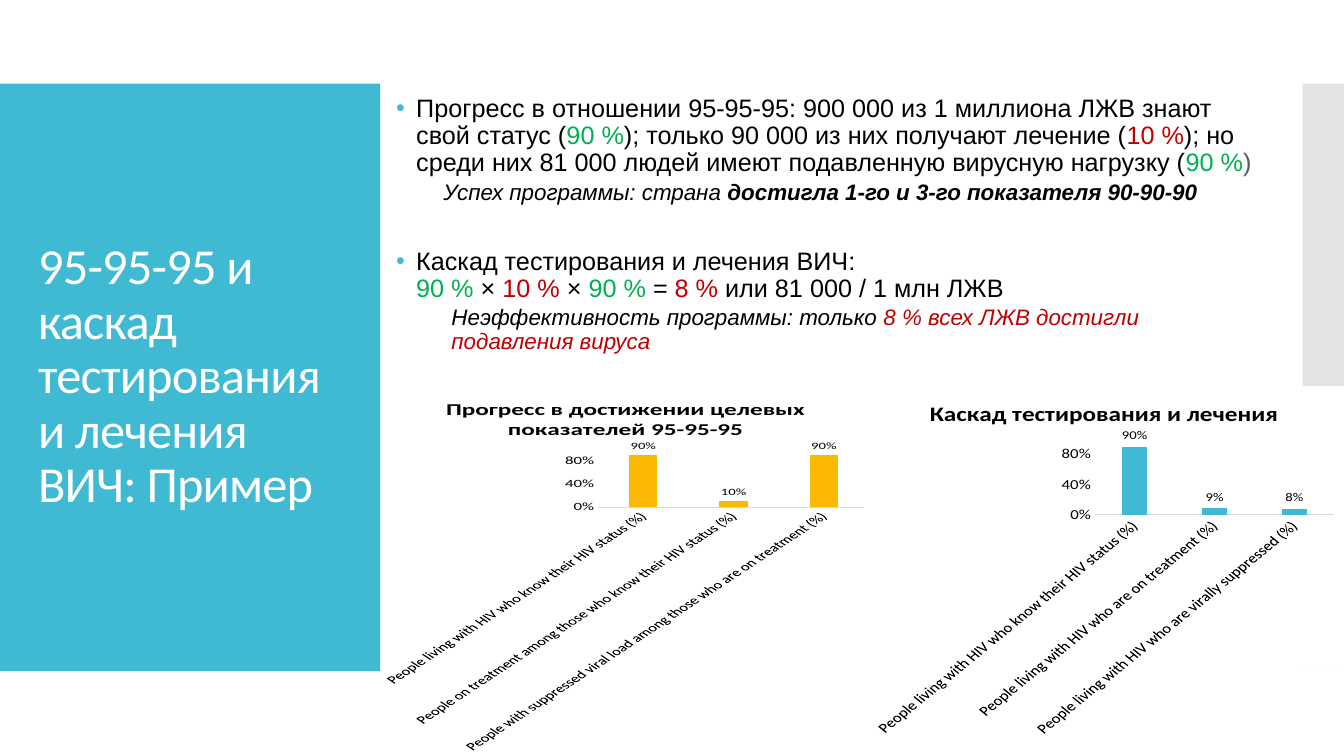
from pptx import Presentation
from pptx.chart.data import CategoryChartData
from pptx.dml.color import RGBColor
from pptx.enum.chart import XL_CHART_TYPE, XL_LABEL_POSITION, XL_TICK_MARK
from pptx.enum.shapes import MSO_SHAPE
from pptx.enum.text import MSO_ANCHOR
from pptx.oxml import parse_xml
from pptx.oxml.ns import nsdecls, qn
from pptx.util import Inches, Pt
from lxml.etree import SubElement

HEX = {"teal": "40BAD2", "gray": "C8C8C8", "white": "FFFFFF", "black": "000000",
       "green": "00B050", "red": "C00000", "dark": "595959", "gold": "FAB900",
       "rule": "D9D9D9"}

MAIN = {"name": "Arial", "size": Pt(18)}
NOTE = {"name": "Arial", "size": Pt(16), "italic": True}
BOLD = {**NOTE, "bold": True}
HEAD = {"name": "Calibri", "size": Pt(36)}
AXIS = {"name": "Calibri", "size": Pt(12)}
LABEL = {"name": "Calibri", "size": Pt(10.5)}
TITLE = {"name": "Calibri", "size": Pt(18), "bold": True}

KNOW = "People living with HIV who know their HIV status (%)"


def paint(fill, key):
    fill.solid()
    fill.fore_color.rgb = RGBColor.from_string(HEX[key])


def style(font, form, key="black"):
    for name, value in form.items():
        setattr(font, name, value)
    font.color.rgb = RGBColor.from_string(HEX[key])


def add_panel(slide, box, key, alpha=None):
    panel = slide.shapes.add_shape(MSO_SHAPE.RECTANGLE, *map(Inches, box))
    panel.shadow.inherit = False
    panel.line.fill.background()
    paint(panel.fill, key)
    if alpha:
        tint = panel.element.spPr.find(".//" + qn("a:srgbClr"))
        SubElement(tint, qn("a:alpha"), val=str(alpha * 1000))


def add_box(slide, box):
    frame = slide.shapes.add_textbox(*map(Inches, box)).text_frame
    frame.word_wrap = True
    frame.vertical_anchor = MSO_ANCHOR.MIDDLE
    return frame


def add_runs(para, runs):
    para.line_spacing = 0.9
    for text, form, key in runs:
        if text == "\n":
            para.add_line_break()
            continue
        run = para.add_run()
        run.text = text
        style(run.font, form, key)


def indent(para, left, bullet=False):
    props = para._p.get_or_add_pPr()
    props.set("marL", str(Inches(left)))
    props.set("indent", str(Inches(-left if bullet else 0)))
    if bullet:
        tint = SubElement(props, qn("a:buClr"))
        SubElement(tint, qn("a:srgbClr"), val=HEX["teal"])
        SubElement(props, qn("a:buFont"), typeface="Arial")
        SubElement(props, qn("a:buChar"), char="•")


def add_body(slide, items):
    frame = add_box(slide, (3.83, 0.2, 8.83, 4.52))
    frame.margin_bottom = Inches(0.5)
    for num, (left, bullet, before, after, runs) in enumerate(items):
        para = frame.add_paragraph() if num else frame.paragraphs[0]
        indent(para, left, bullet)
        para.space_before, para.space_after = Pt(before), Pt(after)
        add_runs(para, runs)


def add_bars(slide, box, title, names, values, key, back=None):
    data = CategoryChartData(number_format="0%")
    data.categories = names
    data.add_series("Series 1", values)
    chart = slide.shapes.add_chart(
        XL_CHART_TYPE.COLUMN_CLUSTERED, *map(Inches, box), data).chart
    chart.has_legend = False
    style(chart.font, {"name": "Calibri", "size": Pt(10)})
    chart.has_title = True
    add_runs(chart.chart_title.text_frame.paragraphs[0], [(title, TITLE, "black")])
    chart.chart_title.include_in_layout = False

    # Axes
    for axis in (chart.category_axis, chart.value_axis):
        axis.has_major_gridlines = False
        axis.major_tick_mark = axis.minor_tick_mark = XL_TICK_MARK.NONE
        style(axis.tick_labels.font, AXIS)
    line = chart.category_axis.format.line
    paint(line.fill, "rule")
    line.width = Pt(0.75)
    turn = chart.category_axis._element.find(qn("c:txPr")).find(qn("a:bodyPr"))
    turn.set("rot", "-2700000")
    scale = chart.value_axis
    scale.format.line.fill.background()
    scale.major_unit = 0.2
    scale.minimum_scale = 0
    scale.tick_labels.number_format = "0%"
    scale.tick_labels.number_format_is_linked = False

    # Bars and labels
    plot = chart.plots[0]
    plot.vary_by_categories = False
    plot.gap_width, plot.overlap = 219, -27
    paint(plot.series[0].format.fill, key)
    plot.has_data_labels = True
    marks = plot.data_labels
    marks.show_value = True
    marks.number_format = "0%"
    marks.number_format_is_linked = False
    marks.position = XL_LABEL_POSITION.OUTSIDE_END
    style(marks.font, LABEL)
    if back:
        chart._chartSpace.find(qn("c:chart")).addnext(parse_xml(
            f'<c:spPr {nsdecls("c", "a")}><a:solidFill><a:srgbClr val="{HEX[back]}"/>'
            '</a:solidFill><a:ln><a:noFill/></a:ln></c:spPr>'))


def main():
    deck = Presentation()
    deck.slide_width, deck.slide_height = Inches(13.33), Inches(7.5)
    slide = deck.slides.add_slide(deck.slide_layouts[6])

    # Side panels
    add_panel(slide, (0, 0.83, 3.77, 5.83), "teal")
    add_panel(slide, (12.92, 0.83, 0.41, 5.83), "gray", 50)

    # Heading
    para = add_box(slide, (0.28, 1.23, 3.22, 5.03)).paragraphs[0]
    add_runs(para, [("95-95-95 и каскад тестирования и лечения ВИЧ: Пример", HEAD, "white")])
    para.runs[0].font._element.set("spc", "-60")

    # Body: left indent, bullet, space before, space after, runs
    add_body(slide, [
        (0.2, True, 0, 0, [
            ("Прогресс в отношении 95-95-95: 900 000 из 1 миллиона ЛЖВ знают свой статус (", MAIN, "black"),
            ("90 %", MAIN, "green"),
            ("); только 90 000 из них получают лечение (", MAIN, "black"),
            ("10 %", MAIN, "red"),
            ("); но среди них 81 000 людей имеют подавленную вирусную нагрузку (", MAIN, "black"),
            ("90 %", MAIN, "green"),
            (")", MAIN, "dark")]),
        (0.47, False, 2.5, 19, [
            ("Успех программы: страна ", NOTE, "black"),
            ("достигла 1-го и 3-го показателя 90-90-90", BOLD, "black")]),
        (0.2, True, 12, 0, [
            ("Каскад тестирования и лечения ВИЧ:", MAIN, "black"),
            ("\n", MAIN, "black"),
            ("90 % ", MAIN, "green"), ("× ", MAIN, "black"),
            ("10 % ", MAIN, "red"), ("× ", MAIN, "black"),
            ("90 % ", MAIN, "green"), ("= ", MAIN, "black"),
            ("8 % ", MAIN, "red"), ("или 81 000 / 1 млн ЛЖВ", MAIN, "black")]),
        (0.55, False, 2.5, 2.5, [
            ("Неэффективность программы: только ", NOTE, "black"),
            ("8 % всех ЛЖВ достигли подавления вируса", NOTE, "red")])])

    # Charts
    add_bars(slide, (3.69, 3.83, 5.03, 3.64),
             "Прогресс в достижении целевых показателей 95-95-95",
             [KNOW, "People on treatment among those who know their HIV status (%)",
              "People with suppressed viral load among those who are on treatment (%)"],
             (0.9, 0.1, 0.9), "gold")
    add_bars(slide, (8.57, 3.83, 4.76, 3.48), "Каскад тестирования и лечения",
             [KNOW, "People living with HIV who are on treatment (%)",
              "People living with HIV who are virally suppressed (%)"],
             (0.9, 0.09, 0.08), "teal", "white")

    deck.save("out.pptx")


if __name__ == "__main__":
    main()
